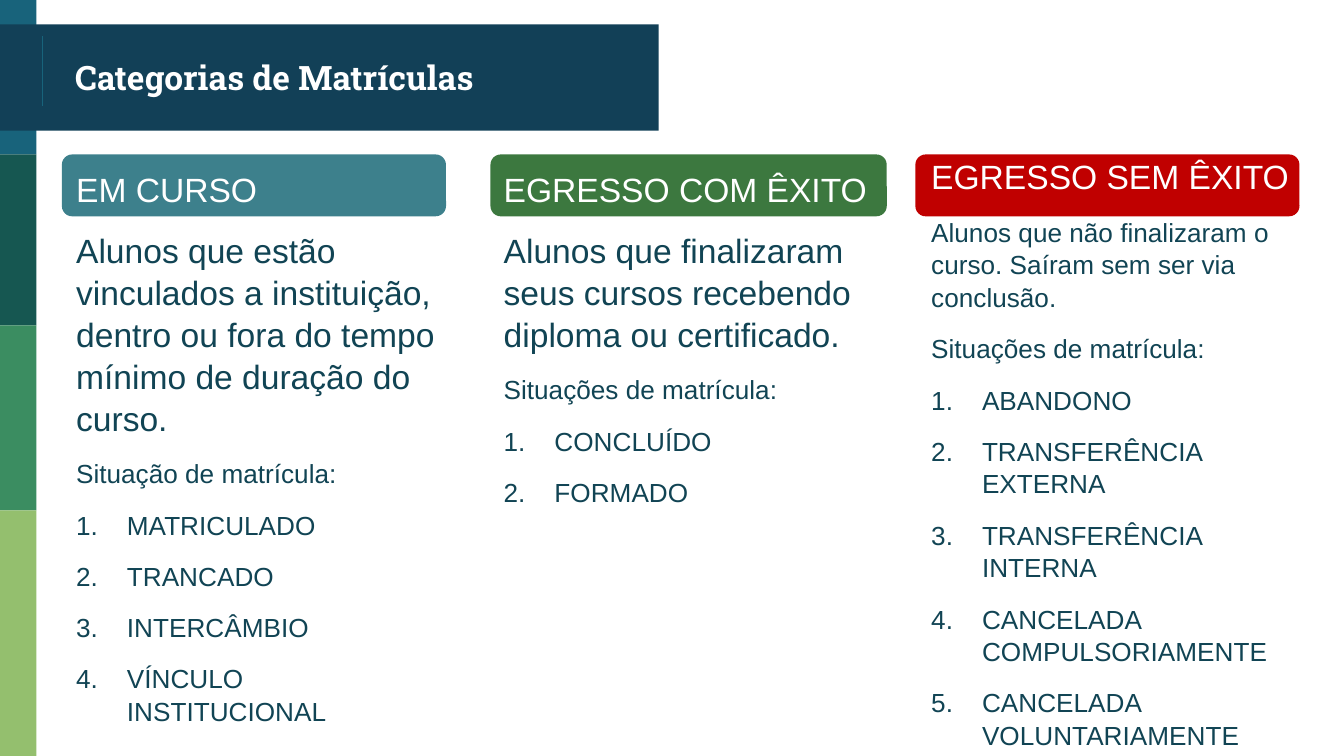
from lxml import etree
from pptx import Presentation
from pptx.dml.color import RGBColor
from pptx.enum.shapes import MSO_CONNECTOR, MSO_SHAPE
from pptx.enum.text import MSO_ANCHOR
from pptx.oxml.ns import qn
from pptx.util import Cm, Pt

WHITE = RGBColor(0xFF, 0xFF, 0xFF)
NAVY = RGBColor(0x12, 0x40, 0x57)
BLUE = RGBColor(0x18, 0x63, 0x7B)
DARK_TEAL = RGBColor(0x16, 0x57, 0x51)
GREEN = RGBColor(0x3B, 0x8D, 0x61)
LIME = RGBColor(0x94, 0xBF, 0x6E)
TEAL = RGBColor(0x3D, 0x80, 0x8C)
FOREST = RGBColor(0x3C, 0x78, 0x3F)
RED = RGBColor(0xC0, 0x00, 0x00)
TEXT = RGBColor(0x11, 0x44, 0x54)

TITLE = "Categorias de Matrículas"
# Sidebar bands, top to bottom: colour and height in cm
BANDS = [(BLUE, 2.92), (DARK_TEAL, 3.23), (GREEN, 3.5), (LIME, 4.64)]
BAND_WIDTH = 0.69

CATEGORIES = [
    {
        "heading": "EM CURSO", "color": TEAL,
        "left": 1.17, "width": 7.26, "text_left": 1.19, "text_top": 2.92,
        "description": "Alunos que estão vinculados a instituição, dentro ou fora "
                       "do tempo mínimo de duração do curso.",
        "description_size": 18,
        "label": "Situação de matrícula:",
        "statuses": ["MATRICULADO", "TRANCADO", "INTERCÂMBIO", "VÍNCULO INSTITUCIONAL"],
    },
    {
        "heading": "EGRESSO COM ÊXITO", "color": FOREST,
        "left": 9.27, "width": 7.49, "text_left": 9.27, "text_top": 2.92,
        "description": "Alunos que finalizaram seus cursos recebendo diploma ou certificado.",
        "description_size": 18,
        "label": "Situações de matrícula:",
        "statuses": ["CONCLUÍDO", "FORMADO"],
    },
    {
        "heading": "EGRESSO SEM ÊXITO", "color": RED,
        "left": 17.3, "width": 7.26, "text_left": 17.35, "text_top": 2.67,
        "description": "Alunos que não finalizaram o curso. Saíram sem ser via conclusão.",
        "description_size": 14,
        "label": "Situações de matrícula:",
        "statuses": ["ABANDONO", "TRANSFERÊNCIA EXTERNA", "TRANSFERÊNCIA INTERNA",
                     "CANCELADA COMPULSORIAMENTE", "CANCELADA VOLUNTARIAMENTE"],
    },
]
HEADING_TOP, HEADING_HEIGHT = 2.92, 1.17
TEXT_WIDTH, TEXT_HEIGHT = 7.49, 10.9
NUMBER_INDENT = Cm(0.96)


def add_block(slide, preset, left, top, width, height, color):
    block = slide.shapes.add_shape(preset, Cm(left), Cm(top), Cm(width), Cm(height))
    block.shadow.inherit = False
    block.fill.solid()
    block.fill.fore_color.rgb = color
    block.line.fill.background()


def add_text_frame(slide, left, top, width, height):
    frame = slide.shapes.add_textbox(Cm(left), Cm(top), Cm(width), Cm(height)).text_frame
    frame.word_wrap = True
    frame.margin_left = frame.margin_right = Cm(0.25)
    frame.margin_top = frame.margin_bottom = Cm(0.25)
    return frame


def add_run(paragraph, text, size, color, font="Arial", bold=False):
    run = paragraph.add_run()
    run.text = text
    run.font.name = font
    run.font.size = Pt(size)
    run.font.bold = bold
    run.font.color.rgb = color


def number_paragraph(paragraph):
    properties = paragraph._p.get_or_add_pPr()
    properties.set("marL", str(NUMBER_INDENT))
    properties.set("indent", str(-NUMBER_INDENT))
    bullet_color = etree.SubElement(properties, qn("a:buClr"))
    etree.SubElement(bullet_color, qn("a:srgbClr"), val=str(TEXT))
    etree.SubElement(properties, qn("a:buFont"), typeface="Arial")
    etree.SubElement(properties, qn("a:buAutoNum"), type="arabicPeriod")


def add_category(slide, category):
    add_block(slide, MSO_SHAPE.ROUNDED_RECTANGLE, category["left"], HEADING_TOP,
              category["width"], HEADING_HEIGHT, category["color"])
    frame = add_text_frame(slide, category["text_left"], category["text_top"],
                           TEXT_WIDTH, TEXT_HEIGHT)
    lines = [
        (category["heading"], 18, WHITE, False),
        (category["description"], category["description_size"], TEXT, False),
        (category["label"], 14, TEXT, False),
    ] + [(status, 14, TEXT, True) for status in category["statuses"]]
    for index, (text, size, color, numbered) in enumerate(lines):
        paragraph = frame.add_paragraph() if index else frame.paragraphs[0]
        paragraph.space_before = Pt(10)
        paragraph.line_spacing = 1.04
        if numbered:
            number_paragraph(paragraph)
        add_run(paragraph, text, size, color)


def main():
    presentation = Presentation()
    presentation.slide_width = Cm(25.4)
    presentation.slide_height = Cm(14.29)
    slide = presentation.slides.add_slide(presentation.slide_layouts[6])

    band_top = 0
    for color, height in BANDS:
        add_block(slide, MSO_SHAPE.RECTANGLE, 0, band_top, BAND_WIDTH, height, color)
        band_top += height
    add_block(slide, MSO_SHAPE.RECTANGLE, 0, 0.46, 12.45, 2.01, NAVY)

    title_rule = slide.shapes.add_connector(
        MSO_CONNECTOR.STRAIGHT, Cm(0.8), Cm(0.69), Cm(0.8), Cm(2.01))
    title_rule.line.color.rgb = BLUE
    title_rule.line.width = Pt(0.75)
    etree.SubElement(title_rule._element.spPr, qn("a:effectLst"))

    for category in CATEGORIES:
        add_category(slide, category)

    title = add_text_frame(slide, 1.17, 0.81, 10.92, 1.3)
    title.vertical_anchor = MSO_ANCHOR.MIDDLE
    add_run(title.paragraphs[0], TITLE, 18, WHITE, "Roboto Slab", True)

    presentation.save("out.pptx")


if __name__ == "__main__":
    main()
